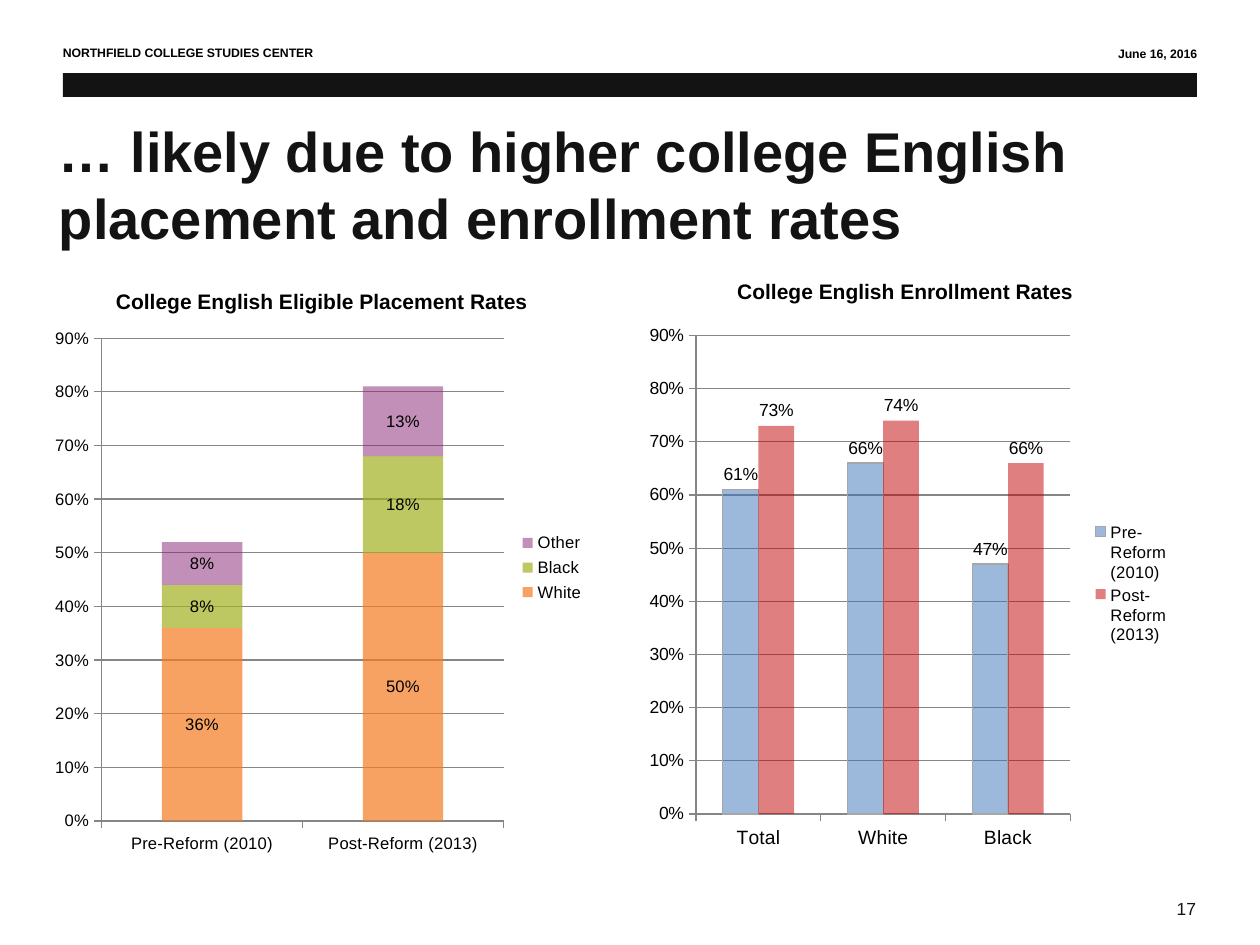
from dataclasses import dataclass

import pptx
import pptx.chart.data
import pptx.dml.color
import pptx.enum.chart
import pptx.enum.shapes
import pptx.enum.text
import pptx.oxml
import pptx.oxml.ns
import pptx.util
from pptx.util import Inches

COLORS = {
    "ink": "141313",
    "black": "000000",
    "axis": "868686",
    "outline": "A6A6A6",
    "orange": "F47B20",
    "olive": "A3B222",
    "plum": "872175",
    "blue": "3B73B9",
    "red": "C00000",
}
FONT = "Arial"
CHART_TYPE = pptx.enum.chart.XL_CHART_TYPE
LABEL_POSITION = pptx.enum.chart.XL_LABEL_POSITION
ALIGN = pptx.enum.text.PP_ALIGN
ANCHOR = pptx.enum.text.MSO_ANCHOR


@dataclass
class Label:
    text: str
    box: tuple
    size: float
    color: str = "black"
    bold: bool = True
    align: ALIGN = ALIGN.LEFT
    anchor: ANCHOR = ANCHOR.TOP
    space_before: float = 0


@dataclass
class Series:
    name: str
    values: tuple
    color: str
    opacity: int
    outline: str = ""


@dataclass
class RateChart:
    title: str
    box: tuple
    kind: CHART_TYPE
    categories: tuple
    series: tuple
    plot_area: tuple
    overlap: int
    label_position: LABEL_POSITION
    value_size: float
    category_size: float
    legend_size: float = 9.5
    legend_area: tuple = ()


LABELS = (
    Label("17", (9.24, 7.08, 0.46, 0.27), 10, "ink", False),
    Label("June 16, 2016", (6.42, 0.32, 3.18, 0.22), 7, align=ALIGN.RIGHT, space_before=2.3),
    Label("NORTHFIELD COLLEGE STUDIES CENTER", (0.4, 0.31, 3.56, 0.22), 7, space_before=2.3),
    Label("… likely due to higher college English placement and enrollment rates",
          (0.37, 0.83, 9, 1.26), 32, "ink", anchor=ANCHOR.MIDDLE),
)

CHARTS = (
    RateChart(
        "College English Eligible Placement Rates", (0.37, 2.11, 4.37, 4.79),
        CHART_TYPE.COLUMN_STACKED, ("Pre-Reform (2010)", "Post-Reform (2013)"),
        (Series("White", (0.36, 0.5), "orange", 70),
         Series("Black", (0.08, 0.18), "olive", 70),
         Series("Other", (0.08, 0.13), "plum", 50)),
        (0.1, 0.12, 0.73, 0.8), 100, LABEL_POSITION.CENTER, 9.5, 9.5),
    RateChart(
        "College English Enrollment Rates", (5, 2.03, 4.37, 4.87),
        CHART_TYPE.COLUMN_CLUSTERED, ("Total", "White", "Black"),
        (Series("Pre-Reform (2010)", (0.61, 0.66, 0.47), "blue", 50, "outline"),
         Series("Post-Reform (2013)", (0.73, 0.74, 0.66), "red", 50)),
        (0.12, 0.13, 0.68, 0.78), 0, LABEL_POSITION.OUTSIDE_END, 10, 11,
        legend_area=(0.83, 0.43, 0.16, 0.21)),
)


def rgb(name: str) -> pptx.dml.color.RGBColor:
    return pptx.dml.color.RGBColor.from_string(COLORS[name])


def style_font(font, size: float, color: str = "black", bold: bool = False) -> None:
    font.name = FONT
    font.size = pptx.util.Pt(size)
    font.bold = bold
    font.color.rgb = rgb(color)


def add_label(slide, label: Label) -> None:
    shape = slide.shapes.add_textbox(*map(Inches, label.box))
    frame = shape.text_frame
    frame.word_wrap = True
    frame.vertical_anchor = label.anchor
    paragraph = frame.paragraphs[0]
    paragraph.alignment = label.align
    paragraph.space_before = pptx.util.Pt(label.space_before)
    run = paragraph.add_run()
    run.text = label.text
    style_font(run.font, label.size, label.color, label.bold)


def add_bar(slide) -> None:
    shape = slide.shapes.add_shape(
        pptx.enum.shapes.MSO_SHAPE.RECTANGLE, *map(Inches, (0.5, 0.58, 9, 0.19)))
    shape.shadow.inherit = False
    shape.fill.solid()
    shape.fill.fore_color.rgb = rgb("ink")
    shape.line.fill.background()


def style_axis(axis, size: float) -> None:
    style_font(axis.tick_labels.font, size)
    axis.major_tick_mark = pptx.enum.chart.XL_TICK_MARK.OUTSIDE
    axis.minor_tick_mark = pptx.enum.chart.XL_TICK_MARK.NONE
    axis.format.line.color.rgb = rgb("axis")
    axis.format.line.width = pptx.util.Pt(0.75)


def style_series(series, item: Series, rate_chart: RateChart) -> None:
    series.format.fill.solid()
    series.format.fill.fore_color.rgb = rgb(item.color)
    color = series._element.xpath("c:spPr/a:solidFill/a:srgbClr")[0]
    alpha = pptx.oxml.parse_xml(
        f'<a:alpha {pptx.oxml.ns.nsdecls("a")} val="{item.opacity * 1000}"/>')
    color.append(alpha)
    if item.outline:
        series.format.line.color.rgb = rgb(item.outline)
        series.format.line.width = pptx.util.Pt(0.75)
    else:
        series.format.line.fill.background()
    labels = series.data_labels
    labels.show_value = True
    labels.number_format = "0%"
    labels.number_format_is_linked = False
    labels.position = rate_chart.label_position
    style_font(labels.font, rate_chart.value_size)


def place_part(chart, part: str, area: tuple, index: int, target: str = "") -> None:
    element = chart.element.xpath(f"c:chart/c:{part}")[0]
    for layout in element.xpath("c:layout"):
        element.remove(layout)
    sizes = "".join(f'<c:{key} val="{value}"/>' for key, value in zip("xywh", area))
    element.insert(index, pptx.oxml.parse_xml(
        f'<c:layout {pptx.oxml.ns.nsdecls("c")}><c:manualLayout>{target}'
        f'<c:xMode val="edge"/><c:yMode val="edge"/>{sizes}</c:manualLayout></c:layout>'))


def add_rate_chart(slide, rate_chart: RateChart) -> None:
    data = pptx.chart.data.CategoryChartData(number_format="0%")
    data.categories = rate_chart.categories
    for item in rate_chart.series:
        data.add_series(item.name, item.values)
    chart = slide.shapes.add_chart(
        rate_chart.kind, *map(Inches, rate_chart.box), data).chart
    style_font(chart.font, rate_chart.value_size)

    chart.has_title = True
    run = chart.chart_title.text_frame.paragraphs[0].add_run()
    run.text = rate_chart.title
    style_font(run.font, 12, bold=True)
    chart.chart_title.include_in_layout = False

    chart.has_legend = True
    chart.legend.position = pptx.enum.chart.XL_LEGEND_POSITION.RIGHT
    chart.legend.include_in_layout = False
    style_font(chart.legend.font, rate_chart.legend_size)
    if rate_chart.legend_area:
        place_part(chart, "legend", rate_chart.legend_area, 1)

    style_axis(chart.category_axis, rate_chart.category_size)
    axis = chart.value_axis
    style_axis(axis, rate_chart.value_size)
    axis.minimum_scale, axis.maximum_scale, axis.major_unit = 0, 0.9, 0.1
    axis.tick_labels.number_format = "0%"
    axis.tick_labels.number_format_is_linked = False
    axis.has_major_gridlines = True
    axis.major_gridlines.format.line.color.rgb = rgb("axis")
    axis.major_gridlines.format.line.width = pptx.util.Pt(0.75)

    plot = chart.plots[0]
    plot.vary_by_categories = False
    plot.gap_width = 150
    plot.overlap = rate_chart.overlap
    for series, item in zip(plot.series, rate_chart.series):
        style_series(series, item, rate_chart)
    place_part(chart, "plotArea", rate_chart.plot_area, 0, '<c:layoutTarget val="inner"/>')


def main() -> None:
    presentation = pptx.Presentation()
    presentation.slide_width = Inches(10)
    presentation.slide_height = Inches(7.5)
    slide = presentation.slides.add_slide(presentation.slide_layouts[6])
    add_bar(slide)
    for label in LABELS:
        add_label(slide, label)
    for rate_chart in CHARTS:
        add_rate_chart(slide, rate_chart)
    presentation.save("out.pptx")


if __name__ == "__main__":
    main()
